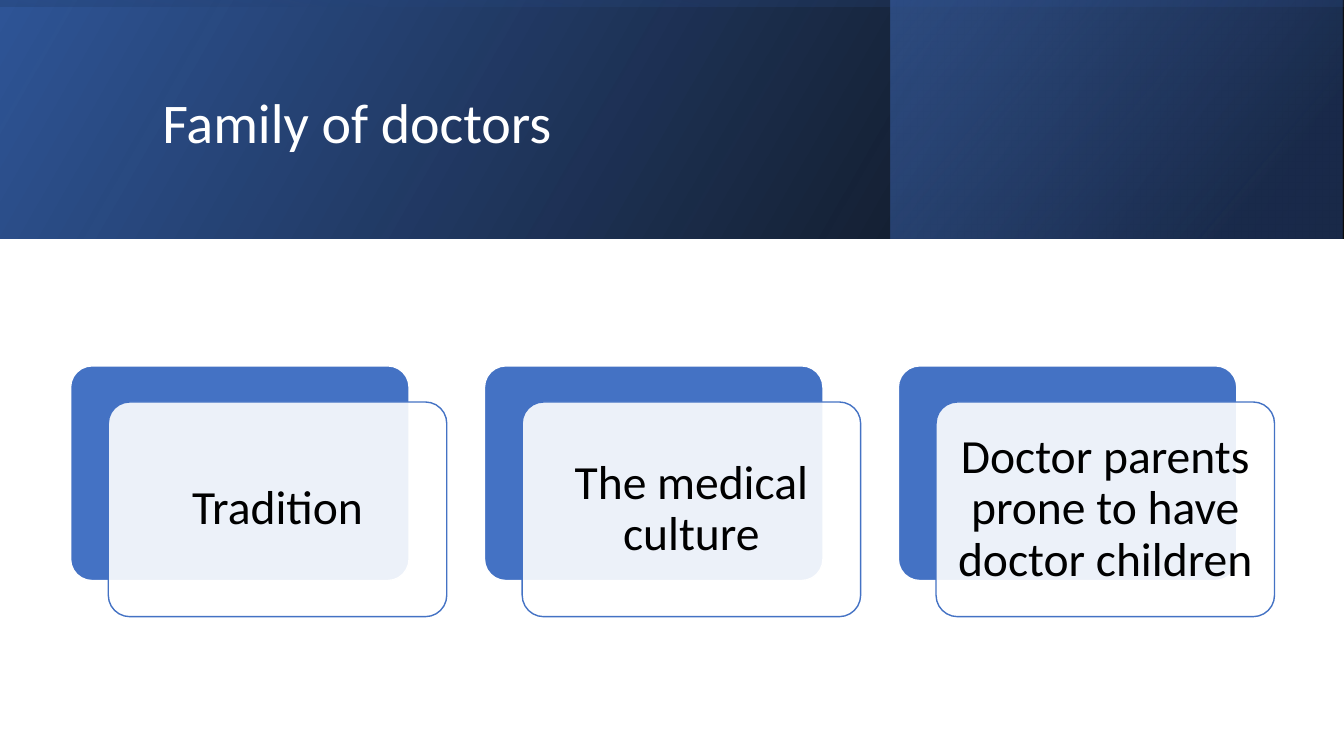
from dataclasses import dataclass

from lxml.etree import SubElement
from pptx import Presentation
from pptx.dml.color import RGBColor
from pptx.enum.shapes import MSO_SHAPE as Preset
from pptx.enum.text import MSO_ANCHOR as Anchor, PP_ALIGN as Align
from pptx.oxml import parse_xml
from pptx.oxml.ns import nsdecls, qn
from pptx.shapes.autoshape import Shape
from pptx.slide import Slide
from pptx.text.text import TextFrame
from pptx.util import Cm, Pt


@dataclass(frozen=True)
class Theme:
    font: str = "Calibri"
    title_size: int = 40
    card_size: int = 34
    white: str = "FFFFFF"
    black: str = "000000"
    blue: str = "4472C4"
    deep_blue: str = "2F5597"
    navy: str = "203864"


@dataclass(frozen=True)
class Stop:
    position: int
    color: str
    opacity: int = 100


@dataclass(frozen=True)
class BannerLayer:
    left: float
    top: float
    width: float
    height: float
    angle: int
    stops: tuple[Stop, Stop]
    rotation: int = 0


THEME = Theme()
SLIDE_W, SLIDE_H = 33.87, 19.05
BANNER_H = 6.02
SIDE_LEFT = 22.45
CARD_LEFT, CARD_TOP, CARD_PITCH = 1.78, 9.22, 10.43
CARD_W, CARD_H = 8.53, 5.41
FRONT_DX, FRONT_DY = 0.95, 0.91
CARD_MARGIN = 0.35

BANNER_LAYERS = (
    BannerLayer(0, 0, SLIDE_W, BANNER_H, 330,
                (Stop(0, THEME.black, 96), Stop(100, THEME.deep_blue))),
    BannerLayer(SIDE_LEFT, 0, 11.39, BANNER_H, 320,
                (Stop(19, THEME.navy, 68), Stop(100, THEME.blue, 48))),
    # A tall strip turned on its side covers the whole banner.
    BannerLayer((SLIDE_W - BANNER_H) / 2, (BANNER_H - SLIDE_W) / 2, BANNER_H, SLIDE_W, 350,
                (Stop(23, THEME.deep_blue, 16), Stop(99, THEME.black, 45)), rotation=270),
)
REASONS = ("Tradition", "The medical culture", "Doctor parents prone to have doctor children")


def add_banner_layer(slide: Slide, layer: BannerLayer) -> None:
    """Add a mirrored rectangle whose gradient stops may be transparent."""
    shape = slide.shapes.add_shape(Preset.RECTANGLE, Cm(layer.left), Cm(layer.top),
                                   Cm(layer.width), Cm(layer.height))
    shape.shadow.inherit = False
    shape.line.fill.background()
    shape.rotation = layer.rotation
    properties = shape._element.spPr
    properties.find(qn("a:xfrm")).set("flipH", "1")
    stops = "".join(
        f'<a:gs pos="{stop.position * 1000}"><a:srgbClr val="{stop.color}">'
        f'<a:alpha val="{stop.opacity * 1000}"/></a:srgbClr></a:gs>'
        for stop in layer.stops
    )
    gradient = parse_xml(
        f'<a:gradFill {nsdecls("a")} rotWithShape="1"><a:gsLst>{stops}</a:gsLst>'
        f'<a:lin ang="{layer.angle * 60000}" scaled="0"/></a:gradFill>'
    )
    properties.find(qn("a:prstGeom")).addnext(gradient)


def write_text(frame: TextFrame, text: str, size: int, color: str, align: Align) -> None:
    frame.word_wrap = True
    frame.vertical_anchor = Anchor.MIDDLE
    paragraph = frame.paragraphs[0]
    paragraph.alignment = align
    paragraph.line_spacing = 0.9
    run = paragraph.add_run()
    run.text = text
    run.font.name = THEME.font
    run.font.size = Pt(size)
    run.font.color.rgb = RGBColor.from_string(color)


def add_title(slide: Slide, text: str) -> None:
    title = slide.shapes.add_textbox(Cm(3.84), Cm(0.97), Cm(27), Cm(4.37))
    write_text(title.text_frame, text, THEME.title_size, THEME.white, Align.LEFT)


def add_card_panel(slide: Slide, left: float, top: float, fill: str, line: str) -> Shape:
    panel = slide.shapes.add_shape(Preset.ROUNDED_RECTANGLE, Cm(left), Cm(top),
                                   Cm(CARD_W), Cm(CARD_H))
    panel.shadow.inherit = False
    panel.adjustments[0] = 0.1
    panel.fill.solid()
    panel.fill.fore_color.rgb = RGBColor.from_string(fill)
    panel.line.color.rgb = RGBColor.from_string(line)
    panel.line.width = Pt(1)
    return panel


def add_card(slide: Slide, left: float, reason: str) -> None:
    """Add a blue panel with an offset, slightly transparent panel for the text."""
    add_card_panel(slide, left, CARD_TOP, THEME.blue, THEME.white)
    front = add_card_panel(slide, left + FRONT_DX, CARD_TOP + FRONT_DY, THEME.white, THEME.blue)
    front_color = front._element.spPr.find(qn("a:solidFill")).find(qn("a:srgbClr"))
    SubElement(front_color, qn("a:alpha")).set("val", "90000")
    frame = front.text_frame
    frame.margin_left = frame.margin_right = Cm(CARD_MARGIN)
    frame.margin_top = frame.margin_bottom = Cm(CARD_MARGIN)
    write_text(frame, reason, THEME.card_size, THEME.black, Align.CENTER)


def main() -> None:
    deck = Presentation()
    deck.slide_width, deck.slide_height = Cm(SLIDE_W), Cm(SLIDE_H)
    slide = deck.slides.add_slide(deck.slide_layouts[6])
    for layer in BANNER_LAYERS:
        add_banner_layer(slide, layer)
    add_title(slide, "Family of doctors")
    for column, reason in enumerate(REASONS):
        add_card(slide, CARD_LEFT + column * CARD_PITCH, reason)
    deck.save("out.pptx")


if __name__ == "__main__":
    main()
